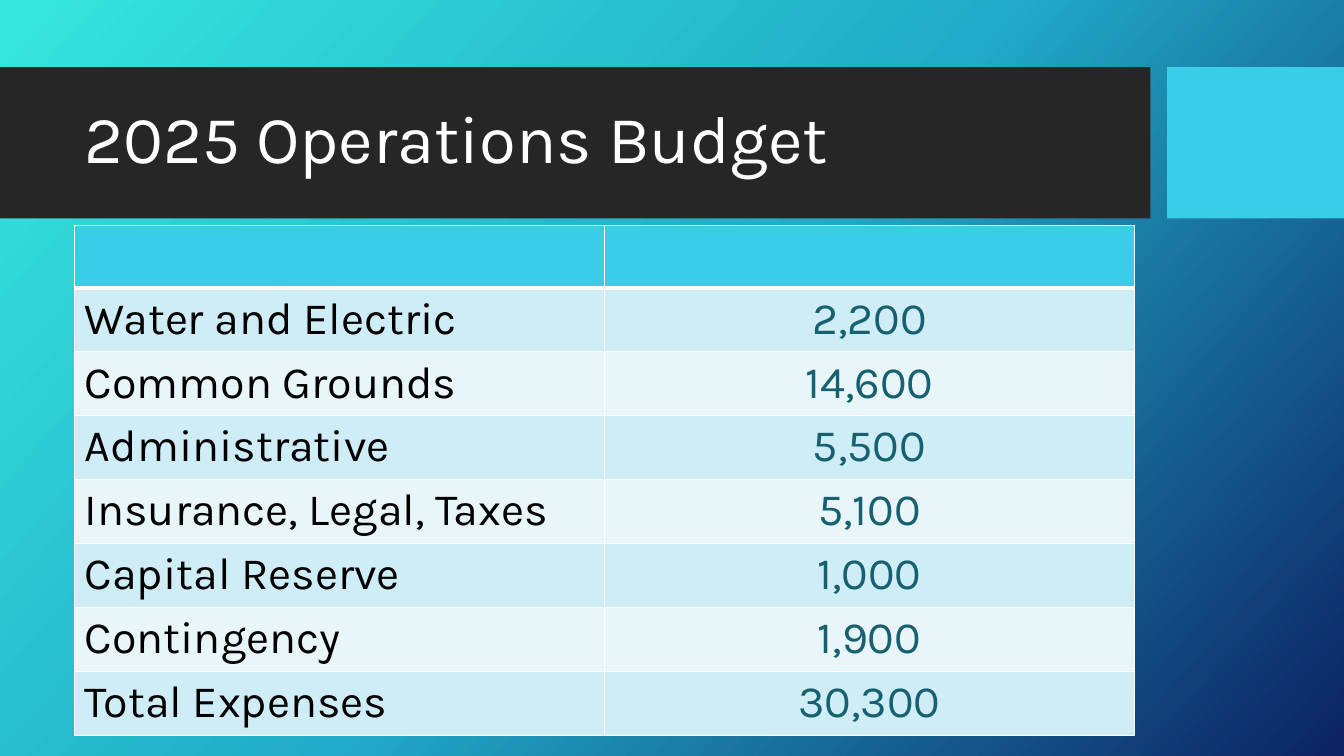
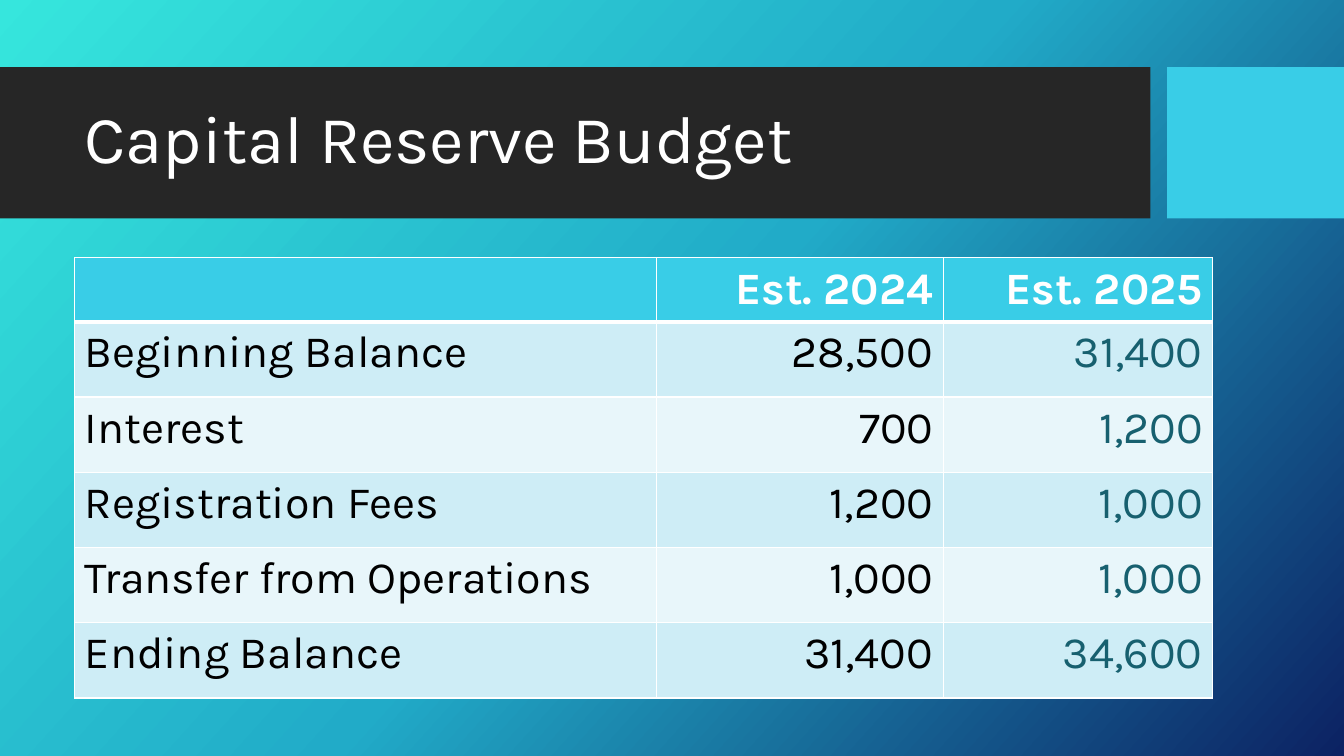
from copy import deepcopy

from lxml import etree
from pptx import Presentation
from pptx.dml.color import RGBColor
from pptx.enum import shapes, text
from pptx.oxml import ns
from pptx.util import Pt

COLORS = {
    "title_band": "262626",
    "accent": "39CDE7",
    "white": "FFFFFF",
    "label": "000000",
    "next_year": "17606F",
    "odd_row": "CEEDF6",
    "even_row": "E8F6FA",
}
BACKGROUND_STOPS = [(0, "36E6DD"), (0.5, "21ABC8"), (1, "0C2263")]
BACKGROUND_ANGLE = 42
FONT = "Karla"
PAGE_WIDTH, PAGE_HEIGHT = 960, 540
LEFT = 53.4
BAND_TOP, BAND_HEIGHT = 48, 108
HEADER_HEIGHT = 44.64
THIN, THICK = 1, 3

LEFT_ALIGN = text.PP_ALIGN.LEFT
CENTER_ALIGN = text.PP_ALIGN.CENTER
RIGHT_ALIGN = text.PP_ALIGN.RIGHT

OPERATIONS = {
    "top": 161.1,
    "row_height": HEADER_HEIGHT,
    "columns": [
        (378.5, LEFT_ALIGN, "label"),
        (378.5, CENTER_ALIGN, "next_year"),
    ],
    "rows": [
        ("", ""),
        ("Water and Electric", "2,200"),
        ("Common Grounds", "14,600"),
        ("Administrative", "5,500"),
        ("Insurance, Legal, Taxes", "5,100"),
        ("Capital Reserve", "1,000"),
        ("Contingency", "1,900"),
        ("Total Expenses", "30,300"),
    ],
}
RESERVE = {
    "top": 184.2,
    "row_height": 53.75,
    "columns": [
        (415.5, LEFT_ALIGN, "label"),
        (205, RIGHT_ALIGN, "label"),
        (192.5, RIGHT_ALIGN, "next_year"),
    ],
    "rows": [
        ("", "Est. 2024", "Est. 2025"),
        ("Beginning Balance", "28,500", "31,400"),
        ("Interest", "700", "1,200"),
        ("Registration Fees", "1,200", "1,000"),
        ("Transfer from Operations", "1,000", "1,000"),
        ("Ending Balance", "31,400", "34,600"),
    ],
}


def color(name):
    return RGBColor.from_string(COLORS[name])


def set_background(master):
    """Give every page the diagonal three-colour gradient."""
    fill = master.background.fill
    fill.gradient()
    fill.gradient_angle = 360 - BACKGROUND_ANGLE
    stop_list = master.element.find(".//" + ns.qn("a:gsLst"))
    stop_list.insert(1, deepcopy(stop_list[0]))
    for stop, (position, value) in zip(fill.gradient_stops, BACKGROUND_STOPS):
        stop.position = position
        stop.color.rgb = RGBColor.from_string(value)


def add_band(page, left, width, fill_name):
    band = page.shapes.add_shape(
        shapes.MSO_SHAPE.RECTANGLE,
        Pt(left), Pt(BAND_TOP), Pt(width), Pt(BAND_HEIGHT))
    band.shadow.inherit = False
    band.fill.solid()
    band.fill.fore_color.rgb = color(fill_name)
    band.line.fill.background()


def write(paragraph, words, size, color_name, bold=False):
    span = paragraph.add_run()
    span.text = words
    formats = {"name": FONT, "size": Pt(size), "bold": bold}
    for attribute, value in formats.items():
        setattr(span.font, attribute, value)
    span.font.color.rgb = color(color_name)


def add_title(page, words):
    box = page.shapes.add_textbox(Pt(LEFT), Pt(59), Pt(757), Pt(85))
    frame = box.text_frame
    frame.word_wrap = True
    frame.vertical_anchor = text.MSO_ANCHOR.MIDDLE
    paragraph = frame.paragraphs[0]
    paragraph.line_spacing = 0.9
    write(paragraph, words, 48, "white")


def set_borders(cell, widths):
    """Draw white lines on the sides named in widths, such as lnL."""
    properties = cell._tc.get_or_add_tcPr()
    for side, width in widths.items():
        line = etree.SubElement(properties, ns.qn("a:" + side), w=str(Pt(width)))
        fill = etree.SubElement(line, ns.qn("a:solidFill"))
        etree.SubElement(fill, ns.qn("a:srgbClr"), val=COLORS["white"])


def fill_cell(cell, words, row_index, align, color_name):
    header = row_index == 0
    borders = {"lnL": THIN, "lnR": THIN}
    if header:
        borders["lnT"] = THIN
    borders["lnB"] = THICK if header else THIN
    set_borders(cell, borders)

    row_fill = "odd_row" if row_index % 2 else "even_row"
    cell.fill.solid()
    cell.fill.fore_color.rgb = color("accent" if header else row_fill)
    if words:
        paragraph = cell.text_frame.paragraphs[0]
        paragraph.alignment = align
        write(paragraph, words, 32, "white" if header else color_name, header)


def add_budget_table(page, top, row_height, columns, rows):
    heights = [HEADER_HEIGHT] + [row_height] * (len(rows) - 1)
    width = sum(column[0] for column in columns)
    table = page.shapes.add_table(
        len(rows), len(columns),
        Pt(LEFT), Pt(top), Pt(width), Pt(sum(heights))).table
    for column, (column_width, _, _) in zip(table.columns, columns):
        column.width = Pt(column_width)
    for row_index, words in enumerate(rows):
        table.rows[row_index].height = Pt(heights[row_index])
        for column_index, (_, align, color_name) in enumerate(columns):
            fill_cell(table.cell(row_index, column_index),
                      words[column_index], row_index, align, color_name)


def add_budget_page(deck, title, budget):
    page = deck.slides.add_slide(deck.slide_layouts[6])
    add_band(page, 0, 821.8, "title_band")
    add_band(page, 833.6, PAGE_WIDTH - 833.6, "accent")
    add_title(page, title)
    add_budget_table(page, **budget)


def main():
    deck = Presentation()
    deck.slide_width, deck.slide_height = Pt(PAGE_WIDTH), Pt(PAGE_HEIGHT)
    set_background(deck.slide_master)
    add_budget_page(deck, "2025 Operations Budget", OPERATIONS)
    add_budget_page(deck, "Capital Reserve Budget", RESERVE)
    deck.save("out.pptx")


if __name__ == "__main__":
    main()
